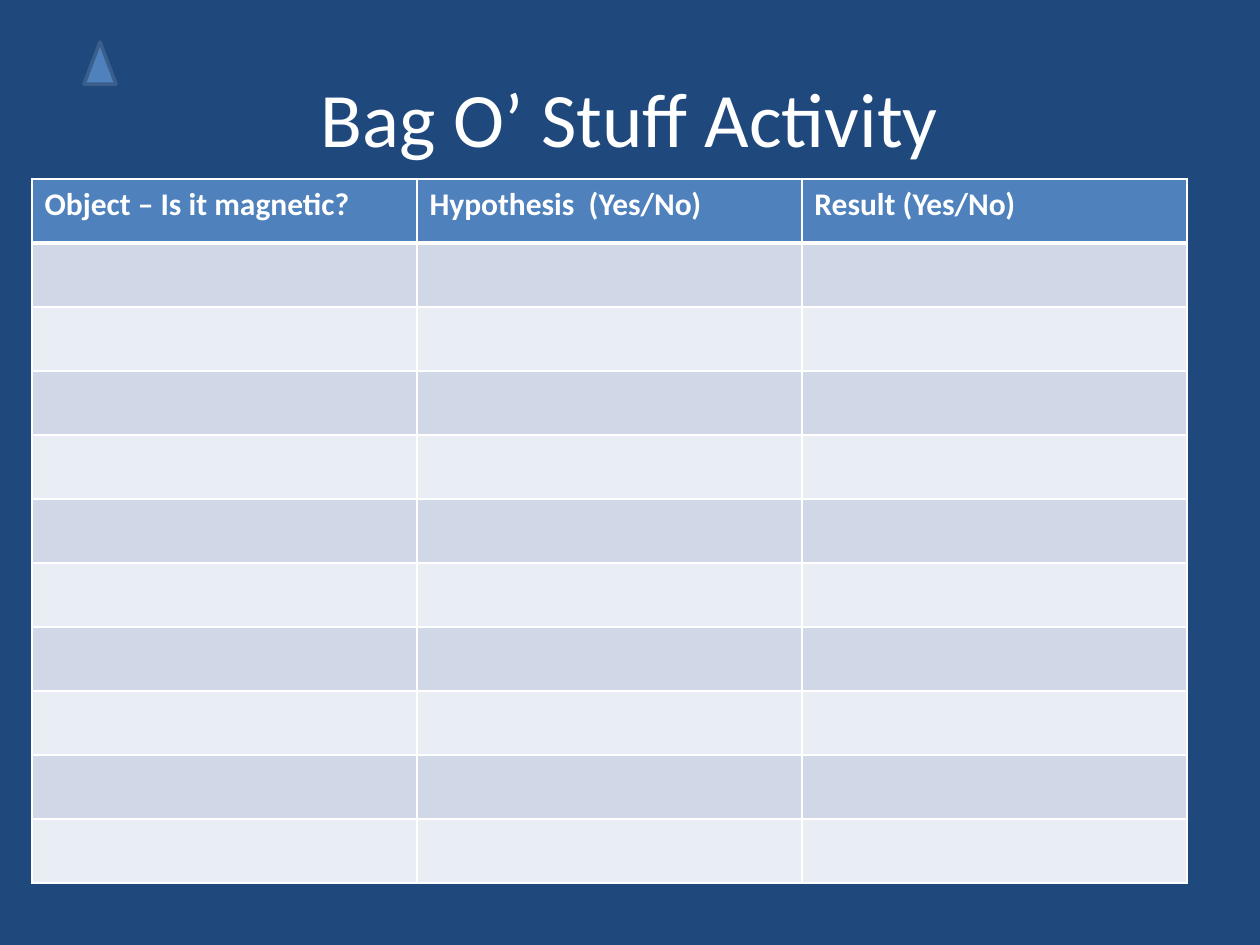
from lxml.etree import SubElement
from pptx import Presentation
from pptx.dml.color import RGBColor
from pptx.enum.shapes import MSO_SHAPE
from pptx.enum.text import MSO_ANCHOR, PP_ALIGN
from pptx.oxml.ns import qn
from pptx.util import Emu, Pt

PX = 914400 // 126
COLORS = {
    "background": "1F497D",
    "header": "4F81BD",
    "odd": "D0D8E8",
    "even": "E9EDF4",
    "white": "FFFFFF",
    "outline": "3A5F8C",
}
FONT = "Calibri"


def rgb(name):
    return RGBColor.from_string(COLORS[name])


def add_run(p, text, size, bold=False):
    r = p.add_run()
    r.text = text
    r.font.name = FONT
    r.font.size = Pt(size)
    r.font.bold = bold
    r.font.color.rgb = rgb("white")


prs = Presentation()
prs.slide_width = Emu(1260 * PX)
prs.slide_height = Emu(945 * PX)
s = prs.slides.add_slide(prs.slide_layouts[6])
s.background.fill.solid()
s.background.fill.fore_color.rgb = rgb("background")

# Title
sp = s.shapes.add_textbox(63 * PX, 38 * PX, 1134 * PX, 157 * PX)
tf = sp.text_frame
tf.word_wrap = True
tf.vertical_anchor = MSO_ANCHOR.MIDDLE
p = tf.paragraphs[0]
p.alignment = PP_ALIGN.CENTER
add_run(p, "Bag O’ Stuff Activity", 44)

# Activity table
headers = ["Object – Is it magnetic?", "Hypothesis  (Yes/No)", "Result (Yes/No)"]
n_rows, col_w, row_h = 11, 385, 64
table = s.shapes.add_table(
    n_rows, len(headers), 32 * PX, 179 * PX,
    len(headers) * col_w * PX, n_rows * row_h * PX,
).table
for col in table.columns:
    col.width = Emu(col_w * PX)
for i, row in enumerate(table.rows):
    row.height = Emu(row_h * PX)
    fill = "header" if i == 0 else "odd" if i % 2 else "even"
    for j, cell in enumerate(row.cells):
        # White borders, with a thick rule under the header
        widths = {"L": 1, "R": 1, "T": 3 if i == 1 else 1, "B": 3 if i == 0 else 1}
        tcPr = cell._tc.get_or_add_tcPr()
        for side, width in widths.items():
            ln = SubElement(tcPr, qn(f"a:ln{side}"), w=str(Pt(width)))
            solid = SubElement(ln, qn("a:solidFill"))
            SubElement(solid, qn("a:srgbClr"), val=COLORS["white"])
        cell.fill.solid()
        cell.fill.fore_color.rgb = rgb(fill)
        if i == 0:
            add_run(cell.text_frame.paragraphs[0], headers[j], 18, bold=True)

# Triangle marker
sp = s.shapes.add_shape(MSO_SHAPE.ISOSCELES_TRIANGLE, 84 * PX, 42 * PX, 32 * PX, 42 * PX)
sp.shadow.inherit = False
sp.fill.solid()
sp.fill.fore_color.rgb = rgb("header")
sp.line.color.rgb = rgb("outline")
sp.line.width = Pt(2)

prs.save("out.pptx")
